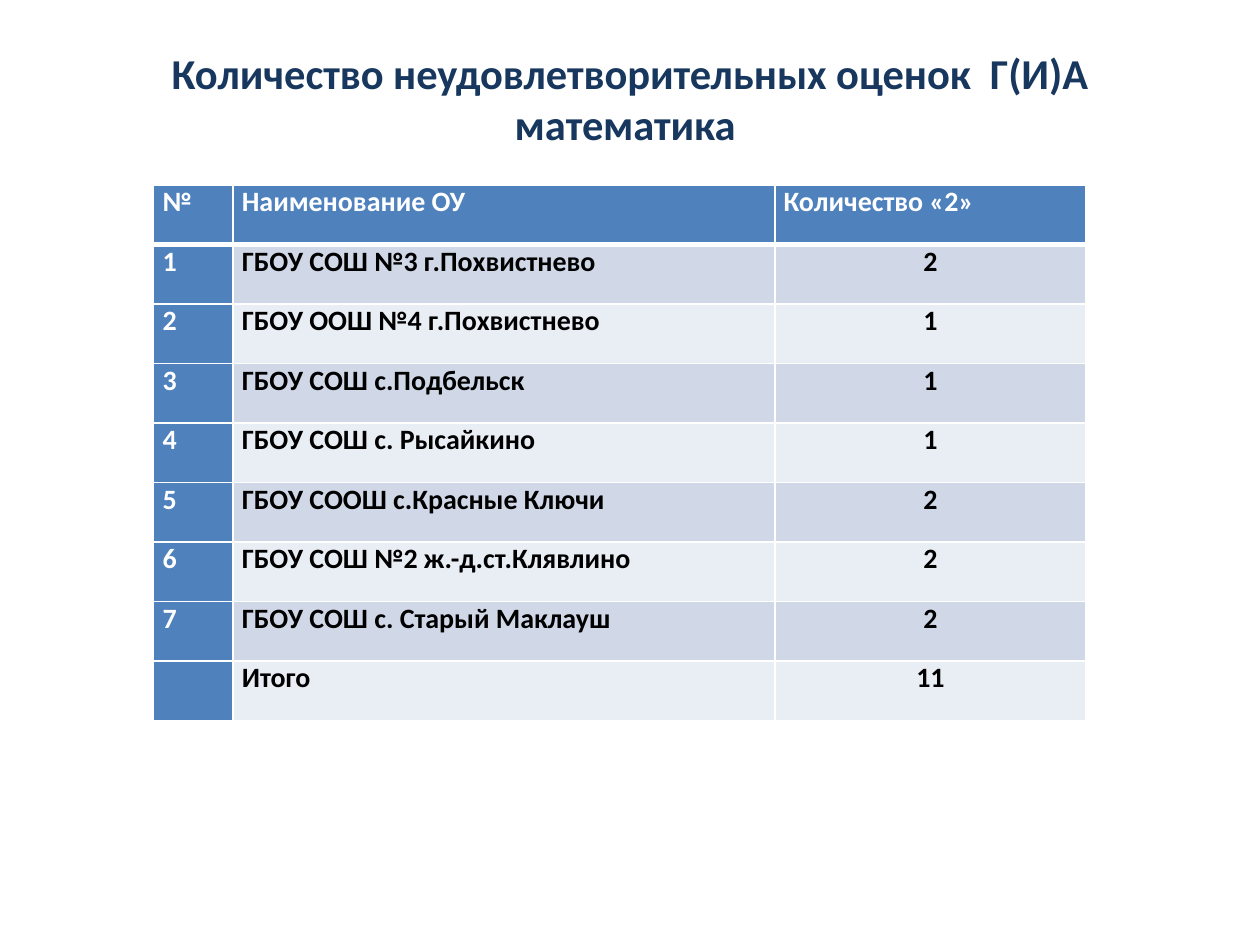
from dataclasses import dataclass

from lxml import etree
from pptx import Presentation
from pptx import util as u
from pptx.dml.color import RGBColor
from pptx.enum import text
from pptx.oxml import ns


@dataclass(frozen=True)
class Theme:
    font: str = "Calibri"
    title: str = "17375E"
    accent: str = "4F81BD"
    odd_row: str = "D0D8E8"
    even_row: str = "E9EDF4"
    light: str = "FFFFFF"
    dark: str = "000000"
    title_size: float = 24.3
    cell_size: float = 16
    thin: float = 1
    thick: float = 3


THEME = Theme()
LEFT, CENTER = text.PP_ALIGN.LEFT, text.PP_ALIGN.CENTER
COLUMN_WIDTHS = (0.63, 4.3, 2.47)
TABLE_HEIGHT = 4.25
ROWS = [
    ("№", "Наименование ОУ", "Количество «2»"),
    ("1", "ГБОУ СОШ №3 г.Похвистнево", "2"),
    ("2", "ГБОУ ООШ №4 г.Похвистнево", "1"),
    ("3", "ГБОУ СОШ с.Подбельск", "1"),
    ("4", "ГБОУ СОШ с. Рысайкино", "1"),
    ("5", "ГБОУ СООШ с.Красные Ключи", "2"),
    ("6", "ГБОУ СОШ №2 ж.-д.ст.Клявлино", "2"),
    ("7", "ГБОУ СОШ с. Старый Маклауш", "2"),
    ("", "Итого", "11"),
]


def write(tf, content, *, size, color, align=LEFT, bold=True):
    p = tf.paragraphs[0]
    p.alignment = align
    r = p.add_run()
    r.text = content
    r.font.name = THEME.font
    r.font.size = u.Pt(size)
    r.font.bold = bold
    r.font.color.rgb = RGBColor.from_string(color)


def add_title(s, content):
    sp = s.shapes.title
    sp.left, sp.top = u.Inches(0.5), u.Inches(0.3)
    sp.width, sp.height = u.Inches(9), u.Inches(1.25)
    tf = sp.text_frame
    tf.word_wrap = True
    tf.auto_size = text.MSO_AUTO_SIZE.NONE
    tf.vertical_anchor = text.MSO_ANCHOR.MIDDLE
    tf.margin_bottom = u.Inches(0.35)
    write(tf, content, size=THEME.title_size, color=THEME.title, align=CENTER)


def set_borders(cell, **widths):
    tc_pr = cell._tc.get_or_add_tcPr()
    for side in "LRTB":
        width = u.Pt(widths.get(side, THEME.thin))
        ln = etree.SubElement(tc_pr, ns.qn(f"a:ln{side}"), w=str(width))
        fill = etree.SubElement(ln, ns.qn("a:solidFill"))
        etree.SubElement(fill, ns.qn("a:srgbClr"), val=THEME.light)


def format_cell(cell, content, row, col):
    accented = row == 0 or col == 0
    band = THEME.odd_row if row % 2 else THEME.even_row
    cell.margin_left = cell.margin_right = u.Inches(0.07)
    cell.margin_top = cell.margin_bottom = 0
    set_borders(cell,
                T=THEME.thick if row == 1 else THEME.thin,
                B=THEME.thick if row == 0 else THEME.thin)
    cell.fill.solid()
    cell.fill.fore_color.rgb = RGBColor.from_string(
        THEME.accent if accented else band)
    if content:
        write(cell.text_frame, content, size=THEME.cell_size,
              color=THEME.light if accented else THEME.dark,
              align=CENTER if row and col == 2 else LEFT)


def add_results_table(s):
    table = s.shapes.add_table(
        len(ROWS), len(COLUMN_WIDTHS), u.Inches(1.22), u.Inches(1.47),
        u.Inches(sum(COLUMN_WIDTHS)), u.Inches(TABLE_HEIGHT)).table
    table.first_col = True
    for column, width in zip(table.columns, COLUMN_WIDTHS):
        column.width = u.Inches(width)
    for i, values in enumerate(ROWS):
        for j, value in enumerate(values):
            format_cell(table.cell(i, j), value, i, j)


def main():
    prs = Presentation()
    prs.slide_width, prs.slide_height = u.Inches(10), u.Inches(7.5)
    s = prs.slides.add_slide(prs.slide_layouts[5])
    add_title(s, "Количество неудовлетворительных оценок  Г(И)А математика ")
    add_results_table(s)
    prs.save("out.pptx")


if __name__ == "__main__":
    main()
